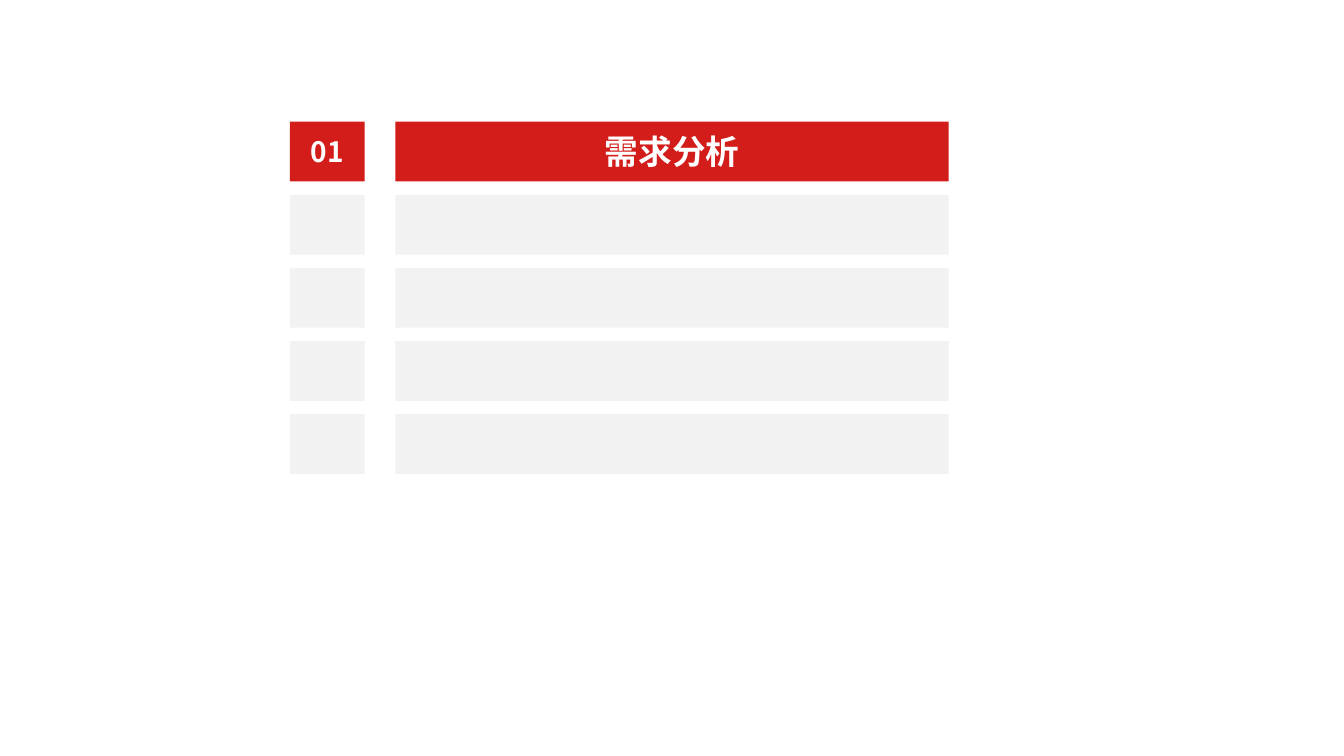
from dataclasses import dataclass

from lxml.etree import SubElement
from pptx import Presentation
from pptx.dml.color import RGBColor
from pptx.enum.shapes import MSO_SHAPE
from pptx.enum.text import MSO_ANCHOR, PP_ALIGN
from pptx.oxml.ns import qn
from pptx.shapes.autoshape import Shape
from pptx.slide import Slide
from pptx.util import Pt

COLORS = {"active": "D21D1A", "inactive": "F2F2F2", "text": "FFFFFF"}
FONT = "Noto Sans CJK SC"

# Agenda grid, in points
FIRST_TOP = 86.9
ROW_PITCH = 52.25
ROW_HEIGHT = 42.7
ROW_COUNT = 5
ACTIVE_ROW = 0


@dataclass(frozen=True)
class Column:
    left: float
    width: float
    font_size: int
    active_label: str


COLUMNS = [
    Column(207.0, 53.4, 20, "01"),
    Column(282.4, 395.3, 24, "需求分析"),
]


def add_label(shape: Shape, column: Column) -> None:
    shape.text_frame.vertical_anchor = MSO_ANCHOR.MIDDLE
    paragraph = shape.text_frame.paragraphs[0]
    paragraph.text = column.active_label
    paragraph.alignment = PP_ALIGN.CENTER
    paragraph.font.size = Pt(column.font_size)
    paragraph.font.bold = True
    paragraph.font.color.rgb = RGBColor.from_string(COLORS["text"])
    paragraph.font.name = FONT

    # East Asian typeface for the Chinese characters
    properties = paragraph._p.get_or_add_pPr().find(qn("a:defRPr"))
    SubElement(properties, qn("a:ea")).set("typeface", FONT)


def add_agenda_row(slide: Slide, row: int) -> None:
    group = slide.shapes.add_group_shape()
    top = FIRST_TOP + row * ROW_PITCH
    active = row == ACTIVE_ROW
    fill = COLORS["active" if active else "inactive"]
    for column in COLUMNS:
        shape = group.shapes.add_shape(
            MSO_SHAPE.RECTANGLE, Pt(column.left), Pt(top), Pt(column.width), Pt(ROW_HEIGHT)
        )
        shape.shadow.inherit = False
        shape.fill.solid()
        shape.fill.fore_color.rgb = RGBColor.from_string(fill)
        shape.line.fill.background()
        if active:
            add_label(shape, column)


def main() -> None:
    presentation = Presentation()
    presentation.slide_width = Pt(960)
    presentation.slide_height = Pt(540)
    slide = presentation.slides.add_slide(presentation.slide_layouts[6])

    # Agenda rows
    for row in range(ROW_COUNT):
        add_agenda_row(slide, row)

    presentation.save("out.pptx")


if __name__ == "__main__":
    main()
